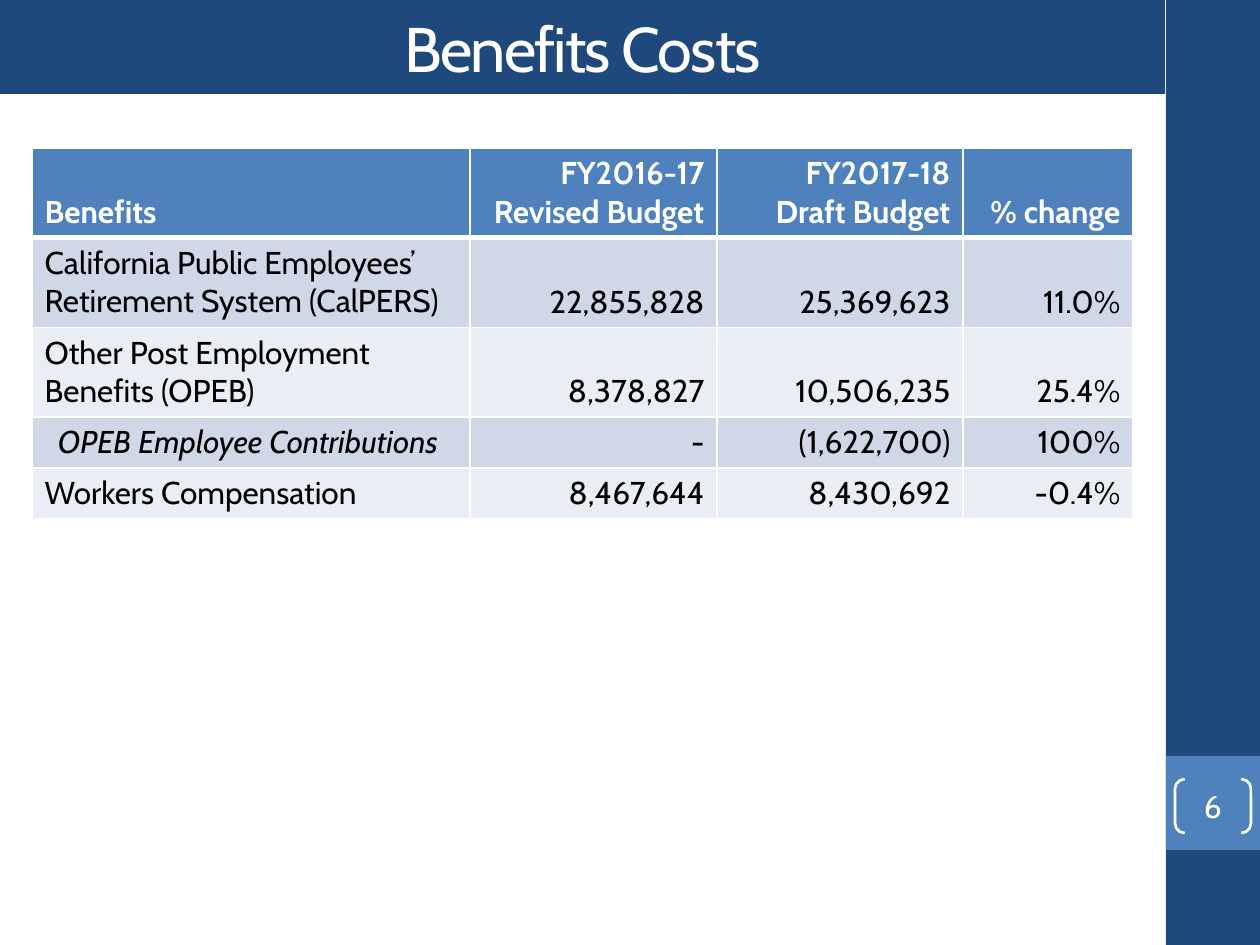
from lxml.etree import SubElement
from pptx import Presentation
from pptx.dml.color import RGBColor
from pptx.enum.shapes import MSO_SHAPE
from pptx.enum.text import MSO_ANCHOR, PP_ALIGN
from pptx.oxml.ns import qn
from pptx.util import Emu, Pt

EMU_PER_PX = 914400 / 126
NAVY = RGBColor(0x1F, 0x49, 0x7D)
BLUE = RGBColor(0x4F, 0x81, 0xBD)
BAND_DARK = RGBColor(0xD0, 0xD8, 0xE8)
BAND_LIGHT = RGBColor(0xE9, 0xED, 0xF4)
WHITE = RGBColor(0xFF, 0xFF, 0xFF)
BLACK = RGBColor(0, 0, 0)

COLUMN_WIDTHS = [438, 247, 246, 170]
ROW_HEIGHTS = [88, 90, 89, 51, 51]
SUB_ITEM = "OPEB Employee Contributions"
BENEFIT_ROWS = [
    ["Benefits", "FY2016-17\nRevised Budget", "FY2017-18 Draft Budget", "% change"],
    ["California Public Employees’ Retirement System (CalPERS)",
     "22,855,828", "25,369,623", "11.0%"],
    ["Other Post Employment Benefits (OPEB)", "8,378,827", "10,506,235", "25.4%"],
    [SUB_ITEM, "-", "(1,622,700)", "100%"],
    ["Workers Compensation", "8,467,644", "8,430,692", "-0.4%"],
]


def px(length):
    return Emu(round(length * EMU_PER_PX))


def write_text(frame, text, size=18, color=WHITE, align=PP_ALIGN.CENTER,
               bold=False, italic=False, spacing=0, font="Cabin"):
    """Fill a text frame, one paragraph per line; spacing is in points."""
    frame.word_wrap = True
    for index, line in enumerate(text.split("\n")):
        para = frame.add_paragraph() if index else frame.paragraphs[0]
        para.alignment = align
        span = para.add_run()
        span.text = line
        span.font.name = font
        span.font.size = Pt(size)
        span.font.bold = bold
        span.font.italic = italic
        span.font.color.rgb = color
        if spacing:
            span.font._element.set("spc", str(spacing * 100))


def set_borders(cell, color, bottom_width):
    properties = cell._tc.get_or_add_tcPr()
    widths = {"a:lnL": 1, "a:lnR": 1, "a:lnT": 1, "a:lnB": bottom_width}
    for position, (side, width) in enumerate(widths.items()):
        line = SubElement(properties, qn(side), w=str(Pt(width)))
        fill = SubElement(line, qn("a:solidFill"))
        SubElement(fill, qn("a:srgbClr"), val=str(color))
        properties.insert(position, line)


class SlideBuilder:
    def __init__(self, slide):
        self.slide = slide

    def shape(self, kind, left, top, width, height, fill=None, line=None):
        shape = self.slide.shapes.add_shape(
            kind, px(left), px(top), px(width), px(height))
        shape.shadow.inherit = False
        if fill is None:
            shape.fill.background()
        else:
            shape.fill.solid()
            shape.fill.fore_color.rgb = fill
        if line is None:
            shape.line.fill.background()
        else:
            shape.line.color.rgb = line
            shape.line.width = Pt(1.5)
        return shape

    def bar(self, left, top, width, height, fill):
        return self.shape(MSO_SHAPE.RECTANGLE, left, top, width, height, fill)

    def title(self, text, width, height):
        box = self.bar(0, 0, width, height, NAVY)
        box.text_frame.vertical_anchor = MSO_ANCHOR.MIDDLE
        write_text(box.text_frame, text, size=36, spacing=-1)

    def page_number(self, text, left, top, width, height):
        box = self.shape(MSO_SHAPE.DOUBLE_BRACKET, left, top, width, height, line=WHITE)
        box.adjustments[0] = 0.18
        frame = box.text_frame
        frame.margin_left = frame.margin_right = 0
        frame.margin_top = frame.margin_bottom = 0
        frame.vertical_anchor = MSO_ANCHOR.MIDDLE
        write_text(frame, text)

    def table(self, rows, left, top, widths, heights):
        table = self.slide.shapes.add_table(
            len(rows), len(widths), px(left), px(top),
            px(sum(widths)), px(sum(heights))).table
        for column, width in zip(table.columns, widths):
            column.width = px(width)
        for row, height in zip(table.rows, heights):
            row.height = px(height)
        for r, row in enumerate(rows):
            for c, text in enumerate(row):
                self.table_cell(table.cell(r, c), text, r, c)

    def table_cell(self, cell, text, row, column):
        header = row == 0
        sub_item = text == SUB_ITEM
        cell.fill.solid()
        cell.fill.fore_color.rgb = BLUE if header else (BAND_LIGHT, BAND_DARK)[row % 2]
        set_borders(cell, WHITE, 3 if header else 1)
        cell.vertical_anchor = MSO_ANCHOR.BOTTOM if header or column else MSO_ANCHOR.TOP
        if sub_item:
            cell.margin_left = px(26)
        write_text(cell.text_frame, text, color=WHITE if header else BLACK,
                   align=PP_ALIGN.RIGHT if column else PP_ALIGN.LEFT,
                   bold=header, italic=sub_item)


def main():
    deck = Presentation()
    deck.slide_width, deck.slide_height = px(1260), px(945)
    page = SlideBuilder(deck.slides.add_slide(deck.slide_layouts[6]))
    page.bar(1166, 0, 94, 945, NAVY)
    page.bar(1166, 756, 94, 94, BLUE)
    page.title("Benefits Costs", 1165, 94)
    page.table(BENEFIT_ROWS, 32, 148, COLUMN_WIDTHS, ROW_HEIGHTS)
    page.page_number("6", 1175, 779, 76, 54)
    deck.save("out.pptx")


if __name__ == "__main__":
    main()
